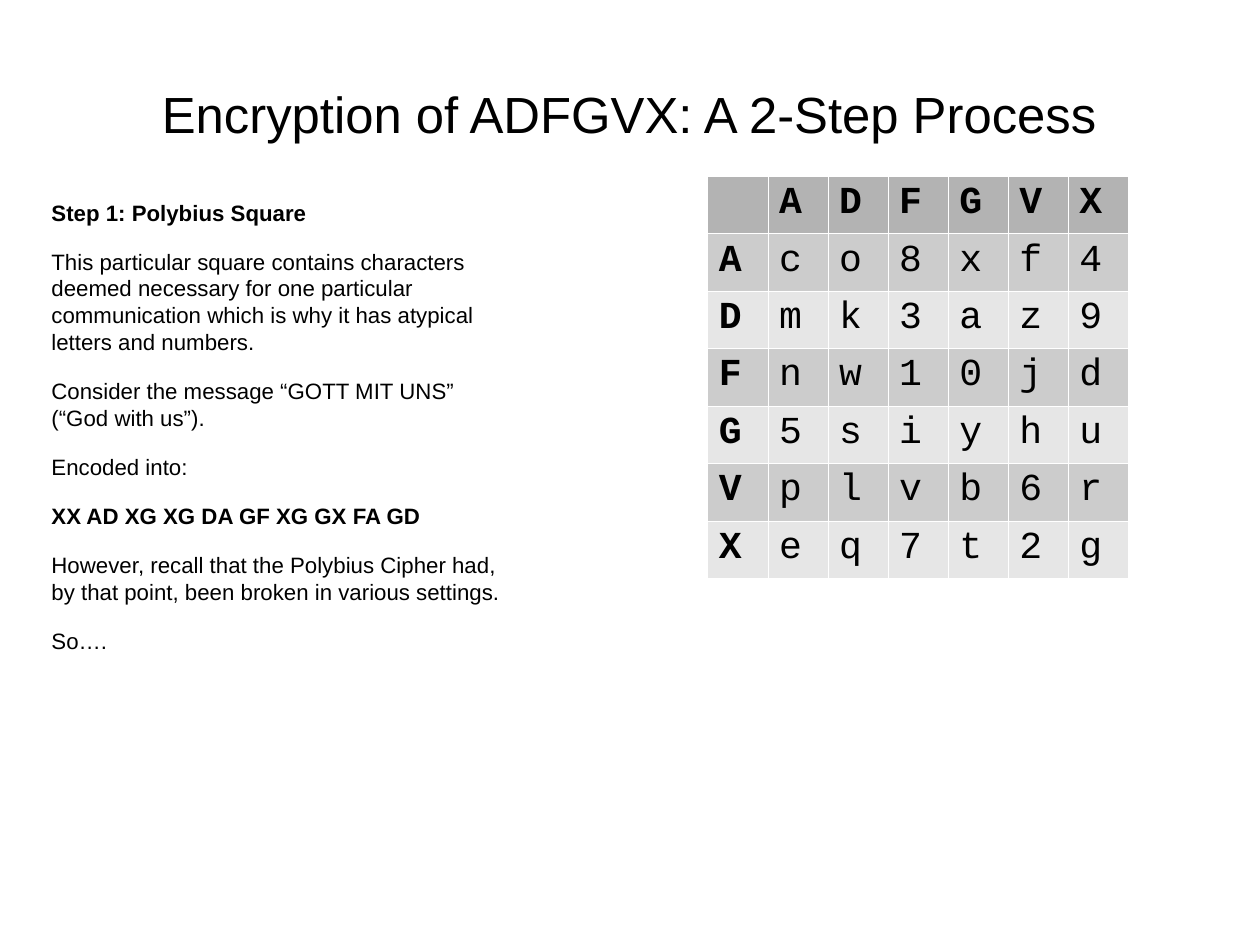
from lxml.etree import SubElement
from pptx import Presentation
from pptx.dml.color import RGBColor
from pptx.enum.text import MSO_ANCHOR, PP_ALIGN
from pptx.oxml.ns import qn
from pptx.util import Inches, Pt

COLORS = {
    "text": "000000",
    "border": "FFFFFF",
    "header": "B3B3B3",
    "odd_row": "CCCCCC",
    "even_row": "E6E6E6",
}

CM_PER_INCH = 2.54

TITLE = "Encryption of ADFGVX: A 2-Step Process"

# Each paragraph with its bold flag
STEPS = [
    ("Step 1: Polybius Square", True),
    ("This particular square contains characters deemed necessary for one "
     "particular communication which is why it has atypical letters and numbers.", False),
    ("Consider the message “GOTT MIT UNS” (“God with us”).", False),
    ("Encoded into:", False),
    ("XX AD XG XG DA GF XG GX FA GD", True),
    ("However, recall that the Polybius Cipher had, by that point, been broken "
     "in various settings.", False),
    ("So….", False),
]

LABELS = "ADFGVX"
SQUARE = ["co8xf4", "mk3az9", "nw10jd", "5siyhu", "plvb6r", "eq7t2g"]


def write_text(para, text, size=14, font="Arial", bold=False,
               align=PP_ALIGN.LEFT, before=0, spacing=1.0):
    para.alignment = align
    para.space_before = Pt(before)
    para.line_spacing = spacing
    span = para.add_run()
    span.text = text
    span.font.size = Pt(size)
    span.font.name = font
    span.font.bold = bold
    span.font.color.rgb = RGBColor.from_string(COLORS["text"])


def add_text_box(page, left, top, width, height, inset_left=0, inset_right=0,
                 inset_y=0, anchor=MSO_ANCHOR.TOP):
    box = page.shapes.add_textbox(Inches(left), Inches(top), Inches(width), Inches(height))
    frame = box.text_frame
    frame.word_wrap = True
    frame.vertical_anchor = anchor
    frame.margin_left = Inches(inset_left)
    frame.margin_right = Inches(inset_right)
    frame.margin_top = frame.margin_bottom = Inches(inset_y)
    return frame


def add_title(page):
    frame = add_text_box(page, 0.55, 0.78, 9.92, 0.48, anchor=MSO_ANCHOR.MIDDLE)
    write_text(frame.paragraphs[0], TITLE, size=32, align=PP_ALIGN.CENTER, spacing=0.9)


def add_steps(page):
    frame = add_text_box(page, 0.23, 1.69, 4.32, 4.11,
                         inset_left=0.22, inset_right=0.1, inset_y=0.05)
    for index, (text, bold) in enumerate(STEPS):
        para = frame.add_paragraph() if index else frame.paragraphs[0]
        write_text(para, text, bold=bold, before=14.2)


def style_cell(cell, fill):
    # Thin border on all four sides, then the fill
    properties = cell._tc.get_or_add_tcPr()
    for side in ("lnL", "lnR", "lnT", "lnB"):
        line = SubElement(properties, qn(f"a:{side}"), w=str(Pt(0.06)))
        solid = SubElement(line, qn("a:solidFill"))
        SubElement(solid, qn("a:srgbClr"), val=COLORS["border"])
    cell.fill.solid()
    cell.fill.fore_color.rgb = RGBColor.from_string(COLORS[fill])
    cell.margin_left = cell.margin_right = Inches(0.1)
    cell.margin_top = cell.margin_bottom = Inches(0.05)


def add_polybius_square(page):
    rows = [["", *LABELS]] + [[label, *line] for label, line in zip(LABELS, SQUARE)]
    count = len(rows)
    table = page.shapes.add_table(count, count, Inches(6.19), Inches(1.54),
                                  Inches(3.68), Inches(3.52)).table
    table.first_row = table.horz_banding = False
    for row, values in enumerate(rows):
        if row == 0:
            fill = "header"
        else:
            fill = "odd_row" if row % 2 else "even_row"
        for column, value in enumerate(values):
            cell = table.cell(row, column)
            style_cell(cell, fill)
            if value:
                write_text(cell.text_frame.paragraphs[0], value, size=24,
                           font="Courier New", bold=row == 0 or column == 0)


def main():
    # A page of 28 by 21 centimetres
    deck = Presentation()
    deck.slide_width = Inches(28 / CM_PER_INCH)
    deck.slide_height = Inches(21 / CM_PER_INCH)
    page = deck.slides.add_slide(deck.slide_layouts[6])
    add_title(page)
    add_steps(page)
    add_polybius_square(page)
    deck.save("out.pptx")


if __name__ == "__main__":
    main()
